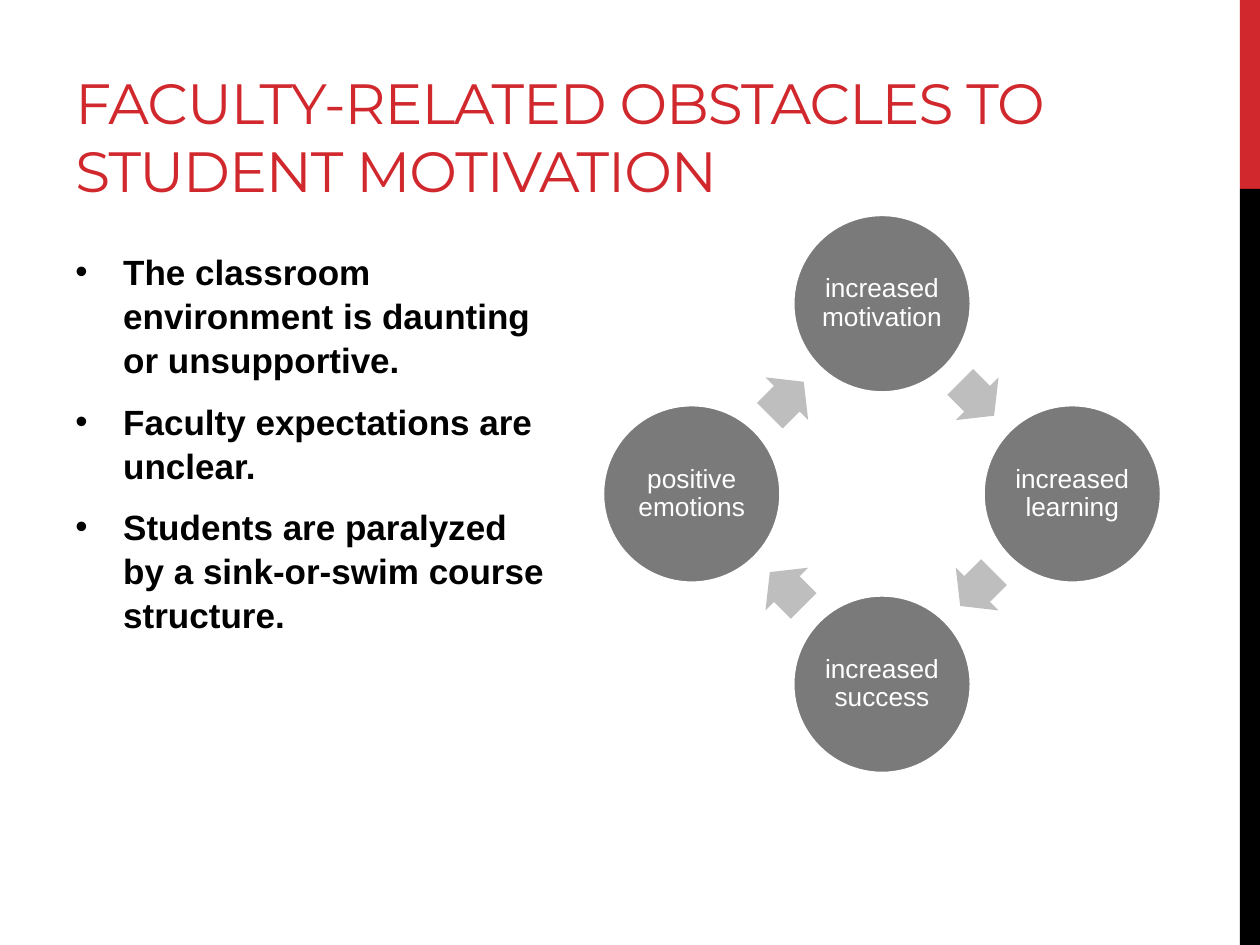
import math

from lxml import etree
from pptx import Presentation
from pptx.dml.color import RGBColor
from pptx.enum.shapes import MSO_SHAPE
from pptx.enum.text import MSO_ANCHOR, PP_ALIGN
from pptx.oxml.ns import qn
from pptx.util import Inches, Pt

RECTANGLE, OVAL, ARROW = MSO_SHAPE.RECTANGLE, MSO_SHAPE.OVAL, MSO_SHAPE.RIGHT_ARROW
BOTTOM, MIDDLE, CENTER = MSO_ANCHOR.BOTTOM, MSO_ANCHOR.MIDDLE, PP_ALIGN.CENTER

COLORS = {
    "red": "D1282E",
    "black": "000000",
    "white": "FFFFFF",
    "stage": "7A7A7A",
    "arrow": "BEBEBE",
}
OBSTACLES = [
    "The classroom environment is daunting or unsupportive.",
    "Faculty expectations are unclear.",
    "Students are paralyzed by a sink-or-swim course structure.",
]
# Clockwise from the top
STAGES = [
    "increased motivation",
    "increased learning",
    "increased success",
    "positive emotions",
]


def color(name):
    return RGBColor.from_string(COLORS[name])


def style_font(paragraph, typeface, size, color_name, bold=False):
    for run in paragraph.runs:
        run.font.name = typeface
        run.font.size = Pt(size)
        run.font.bold = bold
        run.font.color.rgb = color(color_name)


def add_filled(slide, preset, left, top, width, height, fill):
    shape = slide.shapes.add_shape(preset, left, top, width, height)
    shape.shadow.inherit = False
    shape.fill.solid()
    shape.fill.fore_color.rgb = color(fill)
    shape.line.fill.background()
    return shape


def add_side_bar(slide, left, top, width, height):
    red_height = int(height * 0.2)
    add_filled(slide, RECTANGLE, left, top, width, red_height, "red")
    add_filled(slide, RECTANGLE, left, top + red_height, width,
               height - red_height, "black")


def add_title(slide, left, top, width, height):
    frame = slide.shapes.add_textbox(left, top, width, height).text_frame
    frame.word_wrap = True
    frame.vertical_anchor = BOTTOM
    frame.text = "FACULTY-RELATED OBSTACLES TO STUDENT MOTIVATION"
    heading = frame.paragraphs[0]
    style_font(heading, "Montserrat", 32.4, "red")
    # Letter spacing in hundredths of a point
    heading.runs[0].font._element.set("spc", "-60")


def add_obstacles(slide, left, top, width, height):
    frame = slide.shapes.add_textbox(left, top, width, height).text_frame
    frame.word_wrap = True
    frame.text = "\n".join(OBSTACLES)
    indent = Inches(0.38)
    for obstacle in frame.paragraphs:
        style_font(obstacle, "Arial", 20, "black", bold=True)
        obstacle.line_spacing = 1.05
        obstacle.space_before = Pt(4)
        obstacle.space_after = Pt(6)
        # Hanging bullet
        properties = obstacle._p.get_or_add_pPr()
        properties.set("marL", str(indent))
        properties.set("indent", str(-indent))
        etree.SubElement(properties, qn("a:buFont")).set("typeface", "Arial")
        etree.SubElement(properties, qn("a:buChar")).set("char", "•")


def add_stage(slide, center_x, center_y, diameter, label):
    circle = add_filled(slide, OVAL, center_x - diameter // 2,
                        center_y - diameter // 2, diameter, diameter, "stage")
    circle.line.color.rgb = color("white")
    circle.line.width = Pt(2.25)
    frame = circle.text_frame
    frame.word_wrap = True
    frame.vertical_anchor = MIDDLE
    frame.margin_left = frame.margin_right = Inches(0.02)
    frame.margin_top = frame.margin_bottom = Inches(0.02)
    frame.text = label
    caption = frame.paragraphs[0]
    caption.alignment = CENTER
    caption.line_spacing = 0.9
    style_font(caption, "Arial", 15, "white")


def add_cycle_arrow(slide, center_x, center_y, rotation):
    width, height = Inches(0.38), Inches(0.48)
    arrow = add_filled(slide, ARROW, center_x - width // 2,
                       center_y - height // 2, width, height, "arrow")
    arrow.adjustments[0] = 0.6
    arrow.adjustments[1] = 0.5
    arrow.rotation = rotation


def add_cycle(slide, left, top, size):
    diameter = Inches(1.42)
    stage_radius = (size - diameter) / 2
    arrow_radius = stage_radius * math.cos(math.pi / 4)
    step = 360 / len(STAGES)

    def point(radius, degrees):
        angle = math.radians(degrees)
        return (int(left + size / 2 + radius * math.sin(angle)),
                int(top + size / 2 - radius * math.cos(angle)))

    for index, label in enumerate(STAGES):
        stage_angle = index * step
        arrow_angle = stage_angle + step / 2
        add_stage(slide, *point(stage_radius, stage_angle), diameter, label)
        add_cycle_arrow(slide, *point(arrow_radius, arrow_angle), arrow_angle)


def main():
    presentation = Presentation()
    presentation.slide_width = Inches(10)
    presentation.slide_height = Inches(7.5)
    slide = presentation.slides.add_slide(presentation.slide_layouts[6])

    add_side_bar(slide, Inches(9.84), 0, Inches(0.16), Inches(7.5))
    add_title(slide, Inches(0.5), Inches(0.17), Inches(8.25), Inches(1.5))
    add_obstacles(slide, Inches(0.5), Inches(1.92), Inches(4), Inches(4.78))
    add_cycle(slide, Inches(4.78), Inches(1.7), Inches(4.44))

    presentation.save("out.pptx")


if __name__ == "__main__":
    main()
